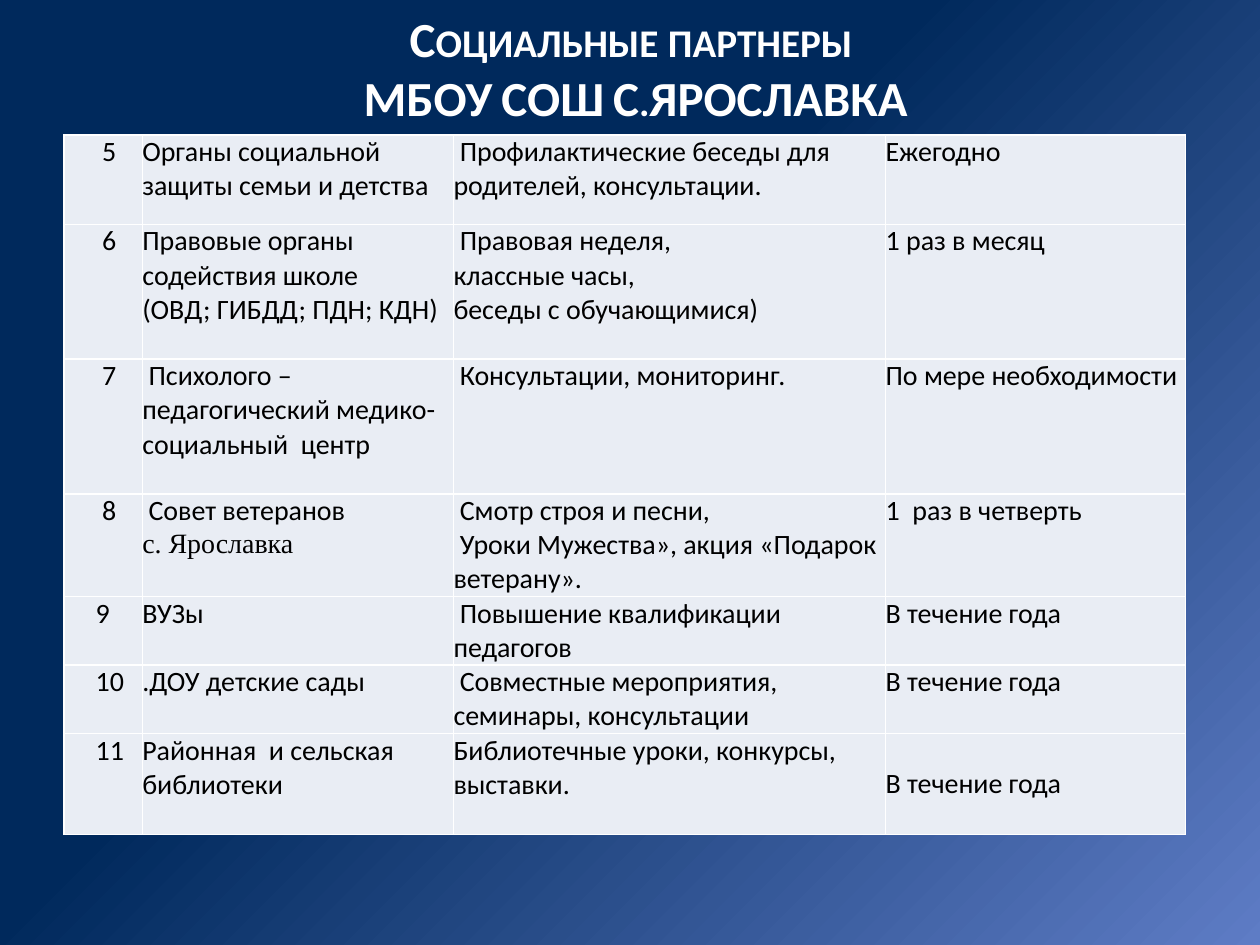
from dataclasses import dataclass

from lxml import etree
from pptx import Presentation
from pptx.dml.color import RGBColor
from pptx.enum.text import MSO_ANCHOR, MSO_AUTO_SIZE, PP_ALIGN
from pptx.oxml import parse_xml
from pptx.oxml.ns import qn
from pptx.util import Inches, Pt


@dataclass(frozen=True)
class Theme:
    glow: str = "5E7CC5"
    navy: str = "00295C"
    white: str = "FFFFFF"
    ink: str = "000000"
    cell: str = "E9EDF4"
    font: str = "Calibri"
    serif: str = "Times New Roman"
    title_size: int = 28
    body_size: int = 16


THEME = Theme()
TITLE = "Социальные партнеры\v МБОУ СОШ С.ЯРОСЛАВКА"
SERIF_LINE = "с. Ярославка"

# Number, partner, joint work, schedule; a line feed starts a new paragraph
PARTNERS = [
    (" 5", "Органы социальной защиты семьи и детства",
     " Профилактические беседы для родителей, консультации.", "Ежегодно"),
    (" 6", "Правовые органы содействия школе\n(ОВД; ГИБДД; ПДН; КДН)",
     " Правовая неделя,\nклассные часы,\nбеседы с обучающимися)", "1 раз в месяц"),
    (" 7", " Психолого – педагогический медико-социальный  центр",
     " Консультации, мониторинг.", "По мере необходимости"),
    (" 8", f" Совет ветеранов\n{SERIF_LINE}",
     " Смотр строя и песни,\n Уроки Мужества», акция «Подарок ветерану».",
     "1  раз в четверть"),
    ("9 ", "ВУЗы", " Повышение квалификации педагогов", "В течение года"),
    ("10", ".ДОУ детские сады",
     " Совместные мероприятия, семинары, консультации", "В течение года"),
    ("11", "Районная  и сельская библиотеки",
     "Библиотечные уроки, конкурсы, выставки.", "В течение года"),
]
COLUMN_WIDTHS = [0.62, 2.47, 3.43, 2.38]
ROW_HEIGHTS = [0.71, 1.07, 1.07, 0.8, 0.53, 0.53, 0.8]
LEFT, TITLE_WIDTH, TITLE_HEIGHT = 0.51, 9, 1.07
NUMBER_INDENT = 0.25


def write(frame, text, size=THEME.body_size, color=THEME.ink, bold=False,
          small_caps=False, align=PP_ALIGN.LEFT, indent=0):
    frame.text = text
    for paragraph in frame.paragraphs:
        paragraph.alignment = align
        if indent:
            properties = paragraph._p.get_or_add_pPr()
            properties.set("marL", str(Inches(indent)))
            properties.set("indent", "0")
        for run in paragraph.runs:
            font = run.font
            font.name = THEME.serif if run.text == SERIF_LINE else THEME.font
            font.size, font.bold = Pt(size), bold
            font.color.rgb = RGBColor.from_string(color)
            if small_caps:
                run._r.get_or_add_rPr().set("cap", "small")


def paint_background(slide):
    """Radial gradient that glows from the lower right corner."""
    slide.background.fill.solid()
    solid = slide.background._cSld.find(".//" + qn("a:solidFill"))
    solid.getparent().replace(solid, parse_xml(
        '<a:gradFill xmlns:a="http://schemas.openxmlformats.org/drawingml/2006/main"'
        ' rotWithShape="1"><a:gsLst>'
        f'<a:gs pos="0"><a:srgbClr val="{THEME.glow}"/></a:gs>'
        f'<a:gs pos="58000"><a:srgbClr val="{THEME.navy}"/></a:gs>'
        '</a:gsLst><a:path path="circle">'
        '<a:fillToRect l="100000" t="100000"/></a:path></a:gradFill>'))


def style_cell(cell):
    cell.margin_left = cell.margin_right = cell.margin_top = cell.margin_bottom = 0
    properties = cell._tc.get_or_add_tcPr()
    for side in ("lnL", "lnR", "lnT", "lnB"):
        line = etree.SubElement(properties, qn(f"a:{side}"), w=str(Pt(1)))
        fill = etree.SubElement(line, qn("a:solidFill"))
        etree.SubElement(fill, qn("a:srgbClr"), val=THEME.white)
    cell.fill.solid()
    cell.fill.fore_color.rgb = RGBColor.from_string(THEME.cell)


def add_title(slide):
    title = slide.shapes.title
    title.left, title.top = Inches(LEFT), 0
    title.width, title.height = Inches(TITLE_WIDTH), Inches(TITLE_HEIGHT)
    frame = title.text_frame
    frame.auto_size = MSO_AUTO_SIZE.NONE
    frame.vertical_anchor = MSO_ANCHOR.MIDDLE
    write(frame, TITLE, size=THEME.title_size, color=THEME.white, bold=True,
          small_caps=True, align=PP_ALIGN.CENTER)


def add_partners(slide):
    table = slide.shapes.add_table(
        len(PARTNERS), len(COLUMN_WIDTHS), Inches(LEFT), Inches(TITLE_HEIGHT),
        Inches(sum(COLUMN_WIDTHS)), Inches(sum(ROW_HEIGHTS))).table
    table.first_row = table.horz_banding = False
    for column, width in zip(table.columns, COLUMN_WIDTHS):
        column.width = Inches(width)
    for row, height, partner in zip(table.rows, ROW_HEIGHTS, PARTNERS):
        row.height = Inches(height)
        for position, (cell, text) in enumerate(zip(row.cells, partner)):
            style_cell(cell)
            write(cell.text_frame, text, indent=0 if position else NUMBER_INDENT)
    last_schedule = table.cell(len(PARTNERS) - 1, len(COLUMN_WIDTHS) - 1)
    last_schedule.vertical_anchor = MSO_ANCHOR.MIDDLE


def main():
    deck = Presentation()
    deck.slide_width, deck.slide_height = Inches(10), Inches(7.5)
    slide = deck.slides.add_slide(deck.slide_layouts.get_by_name("Title Only"))
    paint_background(slide)
    add_title(slide)
    add_partners(slide)
    deck.save("out.pptx")


if __name__ == "__main__":
    main()
